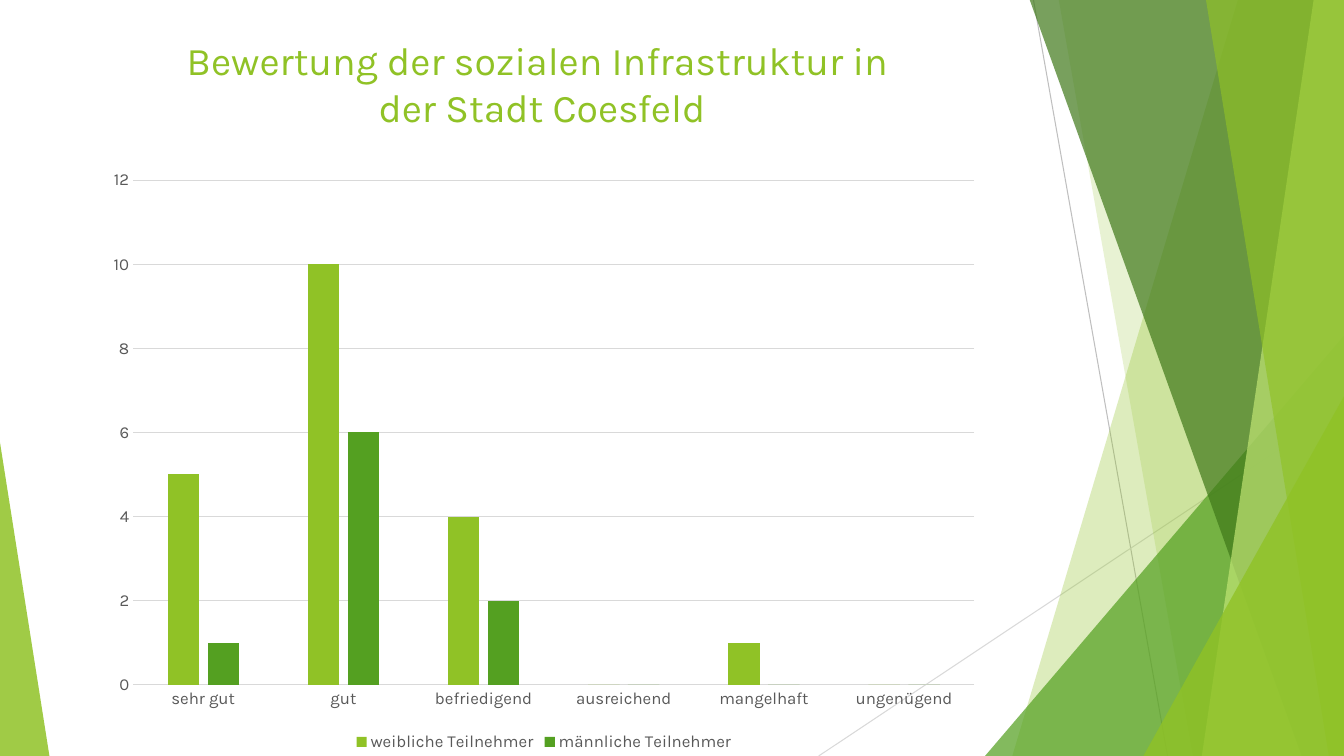
from dataclasses import dataclass

from lxml.etree import SubElement
from pptx import Presentation
from pptx.chart.data import CategoryChartData
from pptx.dml.color import RGBColor
from pptx.enum.chart import XL_CHART_TYPE, XL_LEGEND_POSITION, XL_TICK_MARK
from pptx.enum.shapes import MSO_CONNECTOR, MSO_SHAPE
from pptx.enum.text import MSO_ANCHOR, PP_ALIGN
from pptx.oxml.ns import qn
from pptx.shapes.autoshape import Shape
from pptx.slide import Slide
from pptx.text.text import Font
from pptx.util import Inches, Pt

WIDTH, HEIGHT, TOP = 13.33, 7.5, -0.01


@dataclass(frozen=True)
class Theme:
    font: str = "Karla"
    lime: str = "90C226"
    green: str = "54A021"
    forest: str = "3F7819"
    pale: str = "C0E474"
    ink: str = "595959"
    ray: str = "BFBFBF"
    grid: str = "D9D9D9"
    title_size: int = 28
    chart_size: int = 12
    hairline: float = 0.75


@dataclass(frozen=True)
class Ray:
    start: tuple[float, float]
    end: tuple[float, float]
    color: str


@dataclass(frozen=True)
class Band:
    top_left: float
    bottom_left: float
    color: str
    opacity: int


@dataclass(frozen=True)
class Wedge:
    left: float
    top: float
    width: float
    apex: float
    color: str
    opacity: int


THEME = Theme()
RAYS = [
    Ray((10.25, 0), (11.58, HEIGHT), THEME.ray),
    Ray((WIDTH, 4.03), (8.12, HEIGHT), THEME.grid),
]
FACETS = [
    Band(12.28, 10.04, THEME.lime, 30),
    Band(10.5, 11.83, THEME.lime, 20),
    Wedge(9.77, 3.33, 3.56, 1, THEME.green, 72),
    Band(10.21, 12.91, THEME.forest, 70),
    Band(13.03, 11.92, THEME.pale, 70),
    Band(11.96, 13.18, THEME.lime, 65),
    Wedge(11.34, 3.93, 1.99, 1, THEME.lime, 80),
    Wedge(0, 4.39, 0.49, 0, THEME.lime, 85),
]
TITLE = ["Bewertung der sozialen Infrastruktur in ", "der Stadt Coesfeld"]
GRADES = ["sehr gut", "gut", "befriedigend", "ausreichend", "mangelhaft", "ungenügend"]
RATINGS = {
    "weibliche Teilnehmer": (5, 10, 4, 0, 1, 0),
    "männliche Teilnehmer": (1, 6, 2, 0, 0, 0),
}


def rgb(color: str) -> RGBColor:
    return RGBColor.from_string(color)


def set_font(font: Font, size: int, color: str) -> None:
    font.name = THEME.font
    font.size = Pt(size)
    font.bold = False
    font.color.rgb = rgb(color)


def draw_ray(page: Slide, ray: Ray) -> None:
    ends = [Inches(value) for value in (*ray.start, *ray.end)]
    line = page.shapes.add_connector(MSO_CONNECTOR.STRAIGHT, *ends)
    line.line.color.rgb = rgb(ray.color)
    line.line.width = Pt(THEME.hairline)
    SubElement(line._element.spPr, qn("a:effectLst"))


def outline_facet(page: Slide, facet: Band | Wedge) -> Shape:
    if isinstance(facet, Wedge):
        shape = page.shapes.add_shape(
            MSO_SHAPE.ISOSCELES_TRIANGLE, Inches(facet.left), Inches(facet.top),
            Inches(facet.width), Inches(HEIGHT - facet.top))
        shape.adjustments[0] = facet.apex
        return shape
    corners = [(WIDTH, TOP), (WIDTH, HEIGHT), (facet.bottom_left, HEIGHT)]
    builder = page.shapes.build_freeform(Inches(facet.top_left), Inches(TOP))
    builder.add_line_segments([(Inches(x), Inches(y)) for x, y in corners], close=True)
    return builder.convert_to_shape()


def draw_facet(page: Slide, facet: Band | Wedge) -> None:
    shape = outline_facet(page, facet)
    shape.shadow.inherit = False
    shape.line.fill.background()
    shape.fill.solid()
    shape.fill.fore_color.rgb = rgb(facet.color)
    color = shape._element.spPr.find(qn("a:solidFill"))[0]
    SubElement(color, qn("a:alpha"), val=str(facet.opacity * 1000))


def draw_title(page: Slide) -> None:
    title = page.shapes.title
    title.left, title.top = Inches(0), Inches(0.31)
    title.width, title.height = Inches(10.75), Inches(1.04)
    box = title.text_frame
    box.text = "\n".join(TITLE)
    box.word_wrap = True
    box.vertical_anchor = MSO_ANCHOR.TOP
    for para in box.paragraphs:
        para.alignment = PP_ALIGN.CENTER
        set_font(para.font, THEME.title_size, THEME.lime)


def draw_chart(page: Slide) -> None:
    data = CategoryChartData()
    data.categories = GRADES
    for name, values in RATINGS.items():
        data.add_series(name, values)
    chart = page.shapes.add_chart(
        XL_CHART_TYPE.COLUMN_CLUSTERED, Inches(0.95), Inches(1.57),
        Inches(8.89), Inches(5.93), data).chart
    set_font(chart.font, THEME.chart_size, THEME.ink)
    chart.has_title = False
    chart.has_legend = True
    chart.legend.position = XL_LEGEND_POSITION.BOTTOM
    chart.legend.include_in_layout = False
    set_font(chart.legend.font, THEME.chart_size, THEME.ink)

    plot = chart.plots[0]
    plot.gap_width, plot.overlap = 219, -27
    plot.vary_by_categories = False
    for series, color in zip(plot.series, (THEME.lime, THEME.green)):
        series.format.fill.solid()
        series.format.fill.fore_color.rgb = rgb(color)

    grades, counts = chart.category_axis, chart.value_axis
    for axis in (grades, counts):
        axis.major_tick_mark = axis.minor_tick_mark = XL_TICK_MARK.NONE
        set_font(axis.tick_labels.font, THEME.chart_size, THEME.ink)
    counts.minimum_scale, counts.maximum_scale, counts.major_unit = 0, 12, 2
    counts.format.line.fill.background()
    for line in (grades.format.line, counts.major_gridlines.format.line):
        line.color.rgb = rgb(THEME.grid)
        line.width = Pt(THEME.hairline)


def main() -> None:
    deck = Presentation()
    deck.slide_width, deck.slide_height = Inches(WIDTH), Inches(HEIGHT)
    page = deck.slides.add_slide(deck.slide_layouts.get_by_name("Title Only"))
    for ray in RAYS:
        draw_ray(page, ray)
    for facet in FACETS:
        draw_facet(page, facet)
    draw_chart(page)
    draw_title(page)
    deck.save("out.pptx")


if __name__ == "__main__":
    main()
